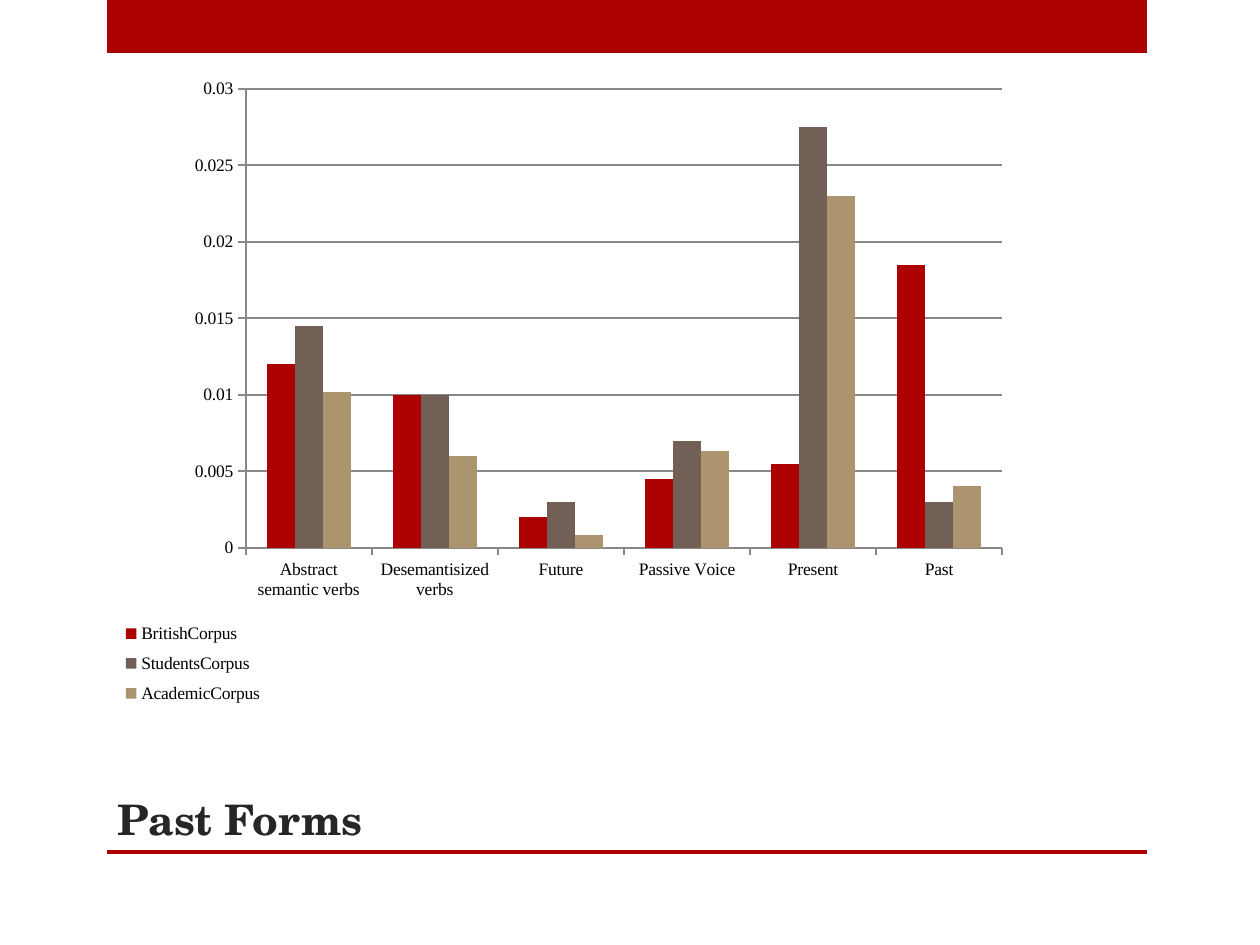
from lxml import etree
from pptx import Presentation
from pptx.chart.data import CategoryChartData
from pptx.dml.color import RGBColor
from pptx.enum import chart as ch, shapes, text
from pptx.oxml.ns import qn
from pptx.util import Emu, Pt

PX = 914400 / 126
COLORS = {
    "red": "AD0101",
    "brown": "726056",
    "tan": "AC956E",
    "axis": "888888",
    "title": "262626",
    "text": "000000",
}
CATEGORIES = ["Abstract semantic verbs", "Desemantisized verbs", "Future",
              "Passive Voice", "Present", "Past"]
SERIES = [
    ("BritishCorpus", "red", [0.012, 0.01, 0.002, 0.0045, 0.0055, 0.0185]),
    ("StudentsCorpus", "brown", [0.0145, 0.01, 0.003, 0.007, 0.0275, 0.003]),
    ("AcademicCorpus", "tan", [0.0102, 0.006, 0.0008, 0.0063, 0.023, 0.004]),
]


def px(*lengths):
    return [Emu(round(n * PX)) for n in lengths]


def rgb(name):
    return RGBColor.from_string(COLORS[name])


def add_bar(s, x, y, w, h):
    sp = s.shapes.add_shape(shapes.MSO_SHAPE.RECTANGLE, *px(x, y, w, h))
    sp.shadow.inherit = False
    sp.fill.solid()
    sp.fill.fore_color.rgb = rgb("red")
    sp.line.fill.background()


def add_title(s, x, y, w, h):
    tf = s.shapes.add_textbox(*px(x, y, w, h)).text_frame
    tf.word_wrap = True
    tf.vertical_anchor = text.MSO_ANCHOR.BOTTOM
    p = tf.paragraphs[0]
    p.text = "Past Forms"
    p.font.name = "TeX Gyre Schola"
    p.font.size = Pt(24)
    p.font.bold = True
    p.font.color.rgb = rgb("title")


def set_layout(element, index, box, inner=False):
    for old in element.findall(qn("c:layout")):
        element.remove(old)
    layout = etree.Element(qn("c:layout"))
    manual = etree.SubElement(layout, qn("c:manualLayout"))
    settings = [("layoutTarget", "inner")] if inner else []
    settings += [("xMode", "edge"), ("yMode", "edge")]
    settings += zip("xywh", map(str, box))
    for tag, val in settings:
        etree.SubElement(manual, qn("c:" + tag)).set("val", val)
    element.insert(index, layout)


def style_line(line, width):
    line.color.rgb = rgb("axis")
    line.width = Pt(width)


def add_corpus_chart(s, x, y, w, h):
    data = CategoryChartData()
    data.categories = CATEGORIES
    for name, _, values in SERIES:
        data.add_series(name, values)
    chart = s.shapes.add_chart(
        ch.XL_CHART_TYPE.COLUMN_CLUSTERED, *px(x, y, w, h), data).chart
    chart.has_title = False
    chart.font.name = "Times New Roman"
    chart.font.size = Pt(10)
    chart.font.color.rgb = rgb("text")

    plot = chart.plots[0]
    plot.gap_width = 150
    plot.overlap = 0
    plot.vary_by_categories = False
    for series, (_, color, _) in zip(plot.series, SERIES):
        series.format.fill.solid()
        series.format.fill.fore_color.rgb = rgb(color)
        series.invert_if_negative = False

    for axis in (chart.category_axis, chart.value_axis):
        axis.major_tick_mark = ch.XL_TICK_MARK.OUTSIDE
        axis.minor_tick_mark = ch.XL_TICK_MARK.NONE
        style_line(axis.format.line, 1.25)
    values = chart.value_axis
    values.minimum_scale, values.maximum_scale = 0, 0.03
    values.major_unit = 0.005
    values.has_major_gridlines = True
    style_line(values.major_gridlines.format.line, 1)
    values.tick_labels.number_format = "General"
    values.tick_labels.number_format_is_linked = False

    chart.has_legend = True
    chart.legend.position = ch.XL_LEGEND_POSITION.RIGHT
    chart.legend.include_in_layout = False
    plot_area = chart._chartSpace.find(".//" + qn("c:plotArea"))
    legend = chart._chartSpace.find(".//" + qn("c:legend"))
    set_layout(plot_area, 0, (0.162, 0.051, 0.675, 0.69), inner=True)
    set_layout(legend, 1, (0.04, 0.84, 0.15, 0.15))


def main():
    prs = Presentation()
    prs.slide_width, prs.slide_height = px(1260, 945)
    s = prs.slides.add_slide(prs.slide_layouts[6])
    add_bar(s, 107, 0, 1040, 53)
    add_bar(s, 107, 850, 1040, 4)
    add_title(s, 105, 790, 935, 60)
    add_corpus_chart(s, 64, 55, 1121, 665)
    prs.save("out.pptx")


if __name__ == "__main__":
    main()
